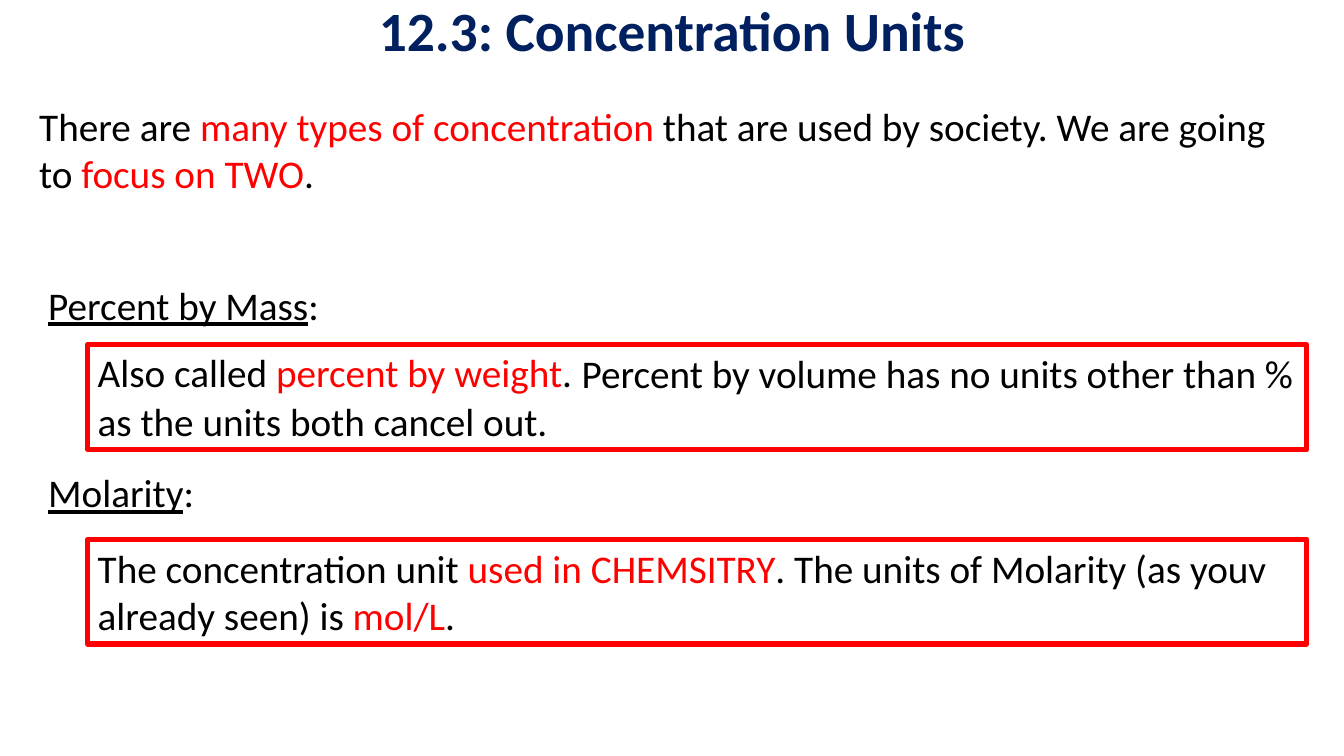
from dataclasses import dataclass

from pptx import Presentation
from pptx import util as u
from pptx.dml.color import RGBColor
from pptx.enum import shapes, text

WIDTH, HEIGHT = u.Inches(13.33), u.Inches(7.5)
NAVY, BLACK, RED = "002060", "000000", "FF0000"
LABEL_LEFT, DETAIL_LEFT, DETAIL_WIDTH = 2.85, 6.53, 90.7
LINE_HEIGHT, PAIR_HEIGHT = 7.6, 13.87
MASS_TOP, MOLARITY_TOP = 45.6, 71.33


@dataclass(frozen=True)
class Area:
    """A rectangle in percent of the slide's width and height."""
    left: float
    top: float
    width: float
    height: float

    def box(self) -> tuple[int, int, int, int]:
        """Return left, top, width and height in EMU."""
        return (int(WIDTH * self.left / 100), int(HEIGHT * self.top / 100),
                int(WIDTH * self.width / 100), int(HEIGHT * self.height / 100))


@dataclass(frozen=True)
class Span:
    """A stretch of text with its own look."""
    words: str
    color: str = BLACK
    underline: bool = False
    size: float = 28
    bold: bool = False


@dataclass(frozen=True)
class Passage:
    """A text box made of spans."""
    area: Area
    spans: tuple[Span, ...]


def rgb(value: str) -> RGBColor:
    """Turn a hex string into a colour."""
    return RGBColor.from_string(value)


def write(p, spans: tuple[Span, ...]) -> None:
    """Add formatted runs to a paragraph."""
    for span in spans:
        r = p.add_run()
        r.text = span.words
        look = {"name": "Calibri", "size": u.Pt(span.size),
                "bold": span.bold, "underline": span.underline}
        for key, value in look.items():
            setattr(r.font, key, value)
        r.font.color.rgb = rgb(span.color)


def add_title(s, area: Area, span: Span) -> None:
    """Place and fill the title placeholder."""
    sp = s.shapes.title
    for key, value in zip(("left", "top", "width", "height"), area.box()):
        setattr(sp, key, value)
    sp.text_frame.vertical_anchor = text.MSO_ANCHOR.MIDDLE
    p = sp.text_frame.paragraphs[0]
    for key, value in {"alignment": text.PP_ALIGN.CENTER, "line_spacing": 0.9}.items():
        setattr(p, key, value)
    write(p, (span,))


def add_passage(s, passage: Passage) -> None:
    """Add one wrapped text box."""
    tf = s.shapes.add_textbox(*passage.area.box()).text_frame
    look = {"word_wrap": True, "auto_size": text.MSO_AUTO_SIZE.SHAPE_TO_FIT_TEXT}
    for key, value in look.items():
        setattr(tf, key, value)
    write(tf.paragraphs[0], passage.spans)


def add_frame(s, area: Area) -> None:
    """Add an unfilled red frame."""
    sp = s.shapes.add_shape(shapes.MSO_SHAPE.RECTANGLE, *area.box())
    sp.shadow.inherit = False
    sp.fill.background()
    sp.line.color.rgb = rgb(RED)
    sp.line.width = u.Pt(3.75)


MASS_FRAME, MOLARITY_FRAME = (
    Area(DETAIL_LEFT, top, DETAIL_WIDTH, PAIR_HEIGHT) for top in (MASS_TOP, MOLARITY_TOP))

PASSAGES = (
    Passage(Area(2.18, 12.93, 93.25, PAIR_HEIGHT), (
        Span("There are "), Span("many types of concentration ", RED),
        Span("that are used by society. We are going to "),
        Span("focus on TWO", RED), Span("."))),
    Passage(Area(LABEL_LEFT, 36.53, 22.88, LINE_HEIGHT), (
        Span("Percent by Mass", underline=True), Span(":"))),
    Passage(Area(LABEL_LEFT, 61.33, 12.83, LINE_HEIGHT), (
        Span("Molarity", underline=True), Span(":"))),
    Passage(Area(DETAIL_LEFT, 45.47, 37.73, LINE_HEIGHT), (
        Span("Also called "), Span("percent by weight", RED), Span("."))),
    Passage(Area(42.54, MASS_TOP, 54.61, LINE_HEIGHT), (
        Span("Percent by volume has no units other than %"),)),
    Passage(Area(DETAIL_LEFT, 51.87, 54.61, LINE_HEIGHT), (
        Span("as the units both cancel out."),)),
    Passage(MOLARITY_FRAME, (
        Span("The concentration unit "), Span("used in CHEMSITRY", RED),
        Span(". The units of Molarity (as youv already seen) is "),
        Span("mol/L", RED), Span("."))),
)


def main() -> None:
    """Build and save the slide."""
    prs = Presentation()
    prs.slide_width, prs.slide_height = WIDTH, HEIGHT
    s = prs.slides.add_slide(prs.slide_layouts[5])
    add_title(s, Area(0, 0, 100, 8.8),
              Span("12.3: Concentration Units", NAVY, size=39.6, bold=True))
    for frame in (MASS_FRAME, MOLARITY_FRAME):
        add_frame(s, frame)
    for passage in PASSAGES:
        add_passage(s, passage)
    prs.save("out.pptx")


if __name__ == "__main__":
    main()
